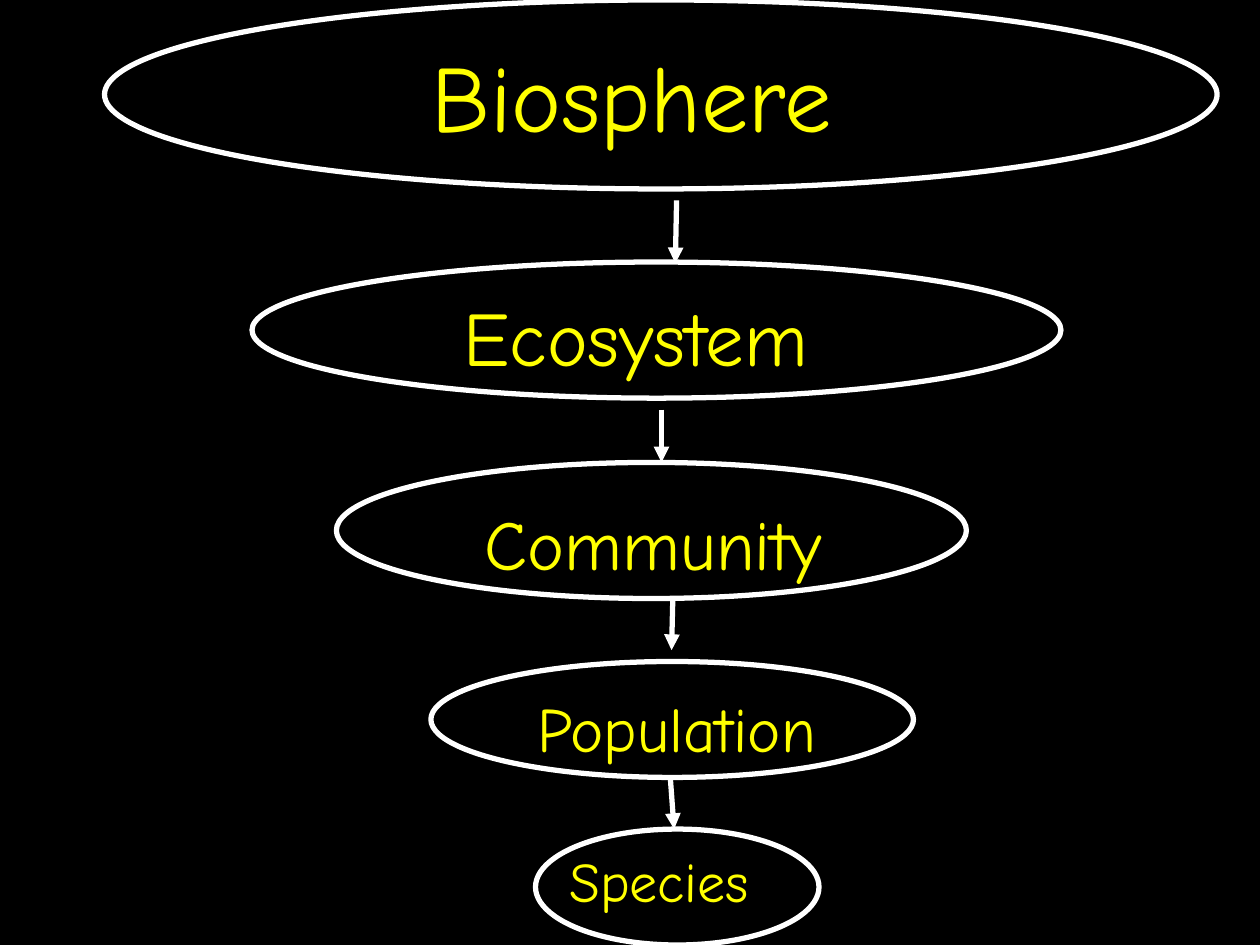
from lxml.etree import SubElement
from pptx import Presentation
from pptx.dml.color import RGBColor
from pptx.enum.shapes import MSO_CONNECTOR, MSO_SHAPE
from pptx.enum.text import MSO_AUTO_SIZE
from pptx.oxml.ns import qn
from pptx.util import Inches, Pt

FONT = "Comic Neue"
WHITE, YELLOW, BLACK = "FFFFFF", "FFFF00", "000000"

# name, text size, oval (left, top, width, height),
# label (left and top inside the oval, width, height)
LEVELS = [
    ("Biosphere", 54, (0.83, 0, 8.83, 1.5), (2.5, 0.25, 4, 1)),
    ("Ecosystem", 44, (2, 2.08, 6.42, 1.08), (1.58, 0.17, 3.58, 0.83)),
    ("Community", 40, (2.67, 3.67, 5, 1.08), (1.08, 0.25, 3.25, 0.77)),
    ("Population", 36, (3.42, 5.25, 3.83, 0.92), (0.75, 0.17, 2.58, 0.7)),
    ("Species", 32, (4.25, 6.58, 2.25, 0.92), (0.17, 0.09, 2, 0.63)),
]
# start x, start y, end x, end y
ARROWS = [
    (5.37, 1.59, 5.36, 2.09),
    (5.25, 3.25, 5.25, 3.67),
    (5.34, 4.75, 5.33, 5.16),
    (5.32, 6.17, 5.35, 6.58),
]


def color(hex_string):
    return RGBColor.from_string(hex_string)


def style_line(line):
    line.color.rgb = color(WHITE)
    line.width = Pt(3)


def add_label(page, text, size, box):
    label = page.shapes.add_textbox(*map(Inches, box))
    frame = label.text_frame
    frame.word_wrap = True
    frame.auto_size = MSO_AUTO_SIZE.SHAPE_TO_FIT_TEXT
    frame.text = text
    para = frame.paragraphs[0]
    spacing = SubElement(para._p.get_or_add_pPr(), qn("a:spcBef"))
    SubElement(spacing, qn("a:spcPct"), val="50000")
    font = para.runs[0].font
    font.name = FONT
    font.size = Pt(size)
    font.color.rgb = color(YELLOW)


def add_level(page, name, size, box, label_box):
    oval = page.shapes.add_shape(MSO_SHAPE.OVAL, *map(Inches, box))
    oval.shadow.inherit = False
    oval.fill.background()
    style_line(oval.line)
    left, top, width, height = label_box
    add_label(page, name, size, (box[0] + left, box[1] + top, width, height))


def add_arrow(page, points):
    arrow = page.shapes.add_connector(MSO_CONNECTOR.STRAIGHT, *map(Inches, points))
    style_line(arrow.line)
    SubElement(arrow.line._get_or_add_ln(), qn("a:tailEnd"), type="triangle")
    SubElement(arrow._element.spPr, qn("a:effectLst"))


def main():
    deck = Presentation()
    deck.slide_width, deck.slide_height = Inches(10), Inches(7.5)
    page = deck.slides.add_slide(deck.slide_layouts[6])
    page.background.fill.solid()
    page.background.fill.fore_color.rgb = color(BLACK)
    for level in LEVELS:
        add_level(page, *level)
    for points in ARROWS:
        add_arrow(page, points)
    deck.save("out.pptx")


if __name__ == "__main__":
    main()
